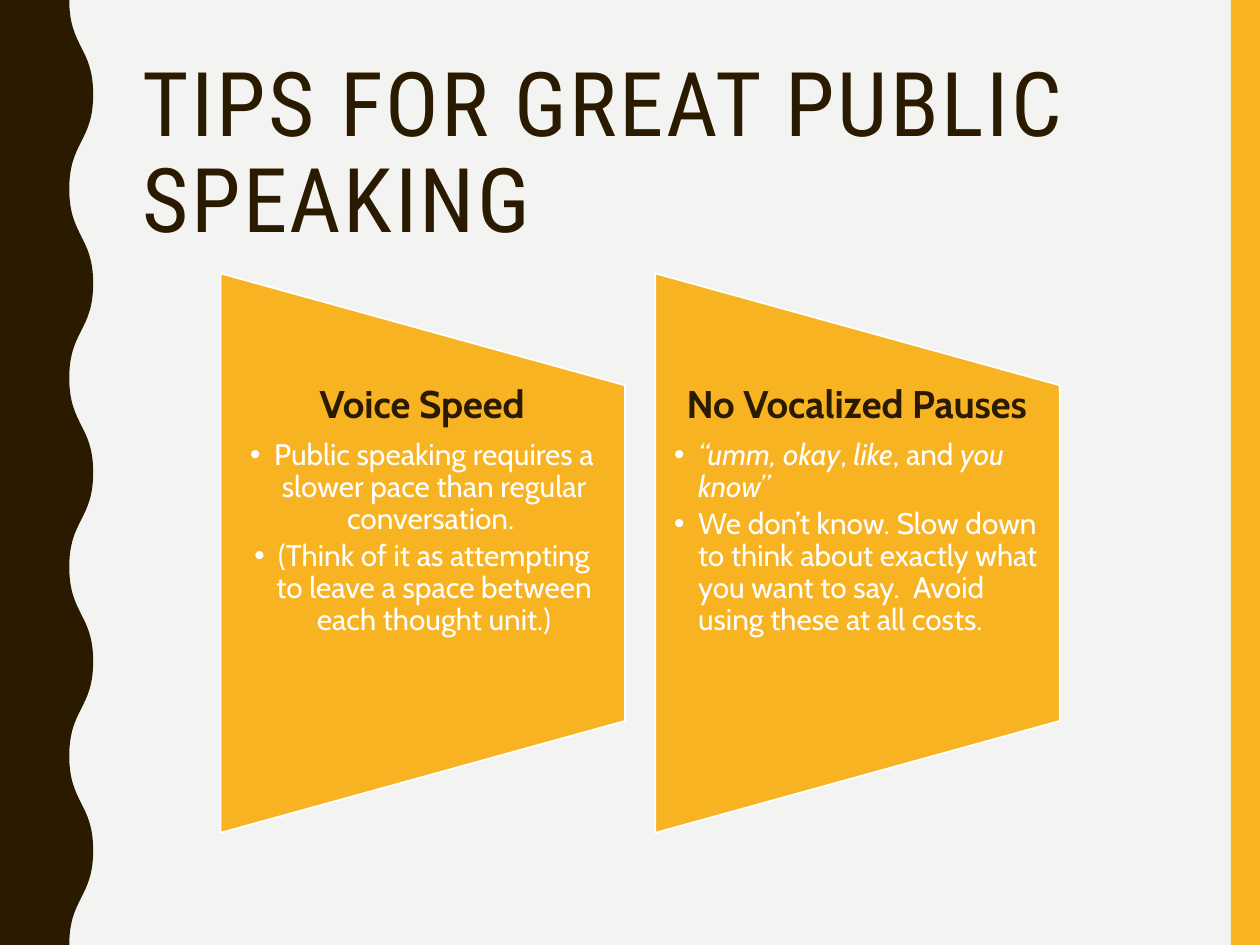
"""Build a slide with two public speaking tips on tapered panels."""
from lxml import etree
from pptx import Presentation
from pptx import util as u
from pptx.dml.color import RGBColor
from pptx.enum import shapes, text
from pptx.oxml.ns import qn

COLORS = {"paper": "F3F3F2", "gold": "F8B323", "brown": "2A1A00", "white": "FFFFFF"}
TITLE = "TIPS FOR GREAT PUBLIC SPEAKING"
TIPS = [
    {"heading": "Voice Speed", "align": text.PP_ALIGN.CENTER, "bullets": [
        [("Public speaking requires a slower pace than regular conversation. ", False)],
        [("(Think of it as attempting to leave a space between each thought unit.)", False)],
    ]},
    {"heading": "No Vocalized Pauses", "align": text.PP_ALIGN.LEFT, "bullets": [
        [("“umm, okay", True), (", ", False), ("like", True), (", and ", False),
         ("you know”", True)],
        [("We don’t know. Slow down to think about exactly what you want to say.  "
          "Avoid using these at all costs.", False)],
    ]},
]
PANEL_LEFT, PANEL_TOP, PANEL_WIDTH, PANEL_HEIGHT, PANEL_STEP = 1.75, 2.17, 3.21, 4.44, 3.45
TEXT_TOP, TEXT_HEIGHT = 3.06, 2.67
WAVE_INNER, WAVE_OUTER, HALF_WAVE, SLIDE_HEIGHT = 0.55, 0.74, 0.75, 7.5


def color(name):
    return RGBColor.from_string(COLORS[name])


def paint(shape, fill, line=None):
    shape.shadow.inherit = False
    shape.fill.solid()
    shape.fill.fore_color.rgb = color(fill)
    if line:
        shape.line.color.rgb = color(line)
        shape.line.width = u.Pt(1)
    else:
        shape.line.fill.background()


def write(paragraph, runs, size, fill, font="Cabin", bold=False, align=text.PP_ALIGN.LEFT,
          after=0, bullet=False, spacing=None):
    paragraph.alignment = align
    paragraph.line_spacing = 0.9
    paragraph.space_before = u.Pt(0)
    paragraph.space_after = u.Pt(size * after)
    if bullet:
        paragraph.level = 1
        properties = paragraph._p.get_or_add_pPr()
        properties.set("marL", str(u.Inches(0.19)))
        properties.set("indent", str(-u.Inches(0.19)))
        etree.SubElement(properties, qn("a:buFont")).set("typeface", "Arial")
        etree.SubElement(properties, qn("a:buChar")).set("char", "•")
    for words, italic in runs:
        run = paragraph.add_run()
        run.text = words
        run.font.name, run.font.size = font, u.Pt(size)
        run.font.bold, run.font.italic = bold, italic
        run.font.color.rgb = color(fill)
        if spacing:
            run._r.get_or_add_rPr().set("spc", str(spacing))


def set_frame(frame, left, right, top, bottom, anchor):
    frame.word_wrap = True
    frame.auto_size = text.MSO_AUTO_SIZE.NONE
    frame.vertical_anchor = anchor
    frame.margin_left, frame.margin_right = u.Inches(left), u.Inches(right)
    frame.margin_top, frame.margin_bottom = u.Inches(top), u.Inches(bottom)


def bend(segment, start, end):
    segment.tag = qn("a:cubicBezTo")
    middle = (start[1] + end[1]) // 2
    for position, (x, y) in enumerate([(start[0], middle), (end[0], middle)]):
        point = etree.Element(qn("a:pt"))
        point.set("x", str(x))
        point.set("y", str(y))
        segment.insert(position, point)


def add_wave(slide):
    halves = round(SLIDE_HEIGHT / HALF_WAVE)
    nodes = [(u.Inches((WAVE_INNER, WAVE_OUTER)[index % 2]), u.Inches(index * HALF_WAVE))
             for index in range(halves + 1)]
    builder = slide.shapes.build_freeform(*nodes[0], scale=1.0)
    builder.add_line_segments([*nodes[1:], (0, u.Inches(SLIDE_HEIGHT)), (0, 0)], close=True)
    wave = builder.convert_to_shape()
    paint(wave, "brown")
    segments = list(wave._element.iter(qn("a:lnTo")))
    for segment, start, end in zip(segments, nodes, nodes[1:]):
        bend(segment, start, end)


def add_edges(slide):
    bar = slide.shapes.add_shape(shapes.MSO_SHAPE.RECTANGLE, u.Inches(9.77), 0,
                                 u.Inches(0.23), u.Inches(SLIDE_HEIGHT))
    paint(bar, "gold")
    add_wave(slide)


def add_title(slide):
    title = slide.shapes.title
    title.left, title.top = u.Inches(1.03), u.Inches(0.42)
    title.width, title.height = u.Inches(8.35), u.Inches(1.63)
    set_frame(title.text_frame, 0.1, 0.1, 0.05, 0.05, text.MSO_ANCHOR.MIDDLE)
    write(title.text_frame.paragraphs[0], [(TITLE, False)], 51, "brown",
          font="Roboto Condensed", spacing=150)


def add_tip(slide, tip, left):
    inset = (PANEL_HEIGHT - PANEL_WIDTH) / 2
    panel = slide.shapes.add_shape(
        shapes.MSO_SHAPE.FLOWCHART_MANUAL_OPERATION, u.Inches(left - inset),
        u.Inches(PANEL_TOP + inset), u.Inches(PANEL_HEIGHT), u.Inches(PANEL_WIDTH))
    panel.rotation = 270
    paint(panel, "gold", line="white")
    box = slide.shapes.add_textbox(u.Inches(left), u.Inches(TEXT_TOP),
                                   u.Inches(PANEL_WIDTH), u.Inches(TEXT_HEIGHT))
    frame = box.text_frame
    set_frame(frame, 0.15, 0.16, 0, 0, text.MSO_ANCHOR.TOP)
    write(frame.paragraphs[0], [(tip["heading"], False)], 22, "brown", bold=True,
          align=text.PP_ALIGN.CENTER, after=0.33)
    for runs in tip["bullets"]:
        write(frame.add_paragraph(), runs, 17, "white", align=tip["align"],
              after=0.15, bullet=True)


def main():
    presentation = Presentation()
    presentation.slide_width, presentation.slide_height = u.Inches(10), u.Inches(SLIDE_HEIGHT)
    slide = presentation.slides.add_slide(presentation.slide_layouts[5])
    slide.background.fill.solid()
    slide.background.fill.fore_color.rgb = color("paper")
    add_edges(slide)
    add_title(slide)
    for index, tip in enumerate(TIPS):
        add_tip(slide, tip, PANEL_LEFT + index * PANEL_STEP)
    presentation.save("out.pptx")


if __name__ == "__main__":
    main()
